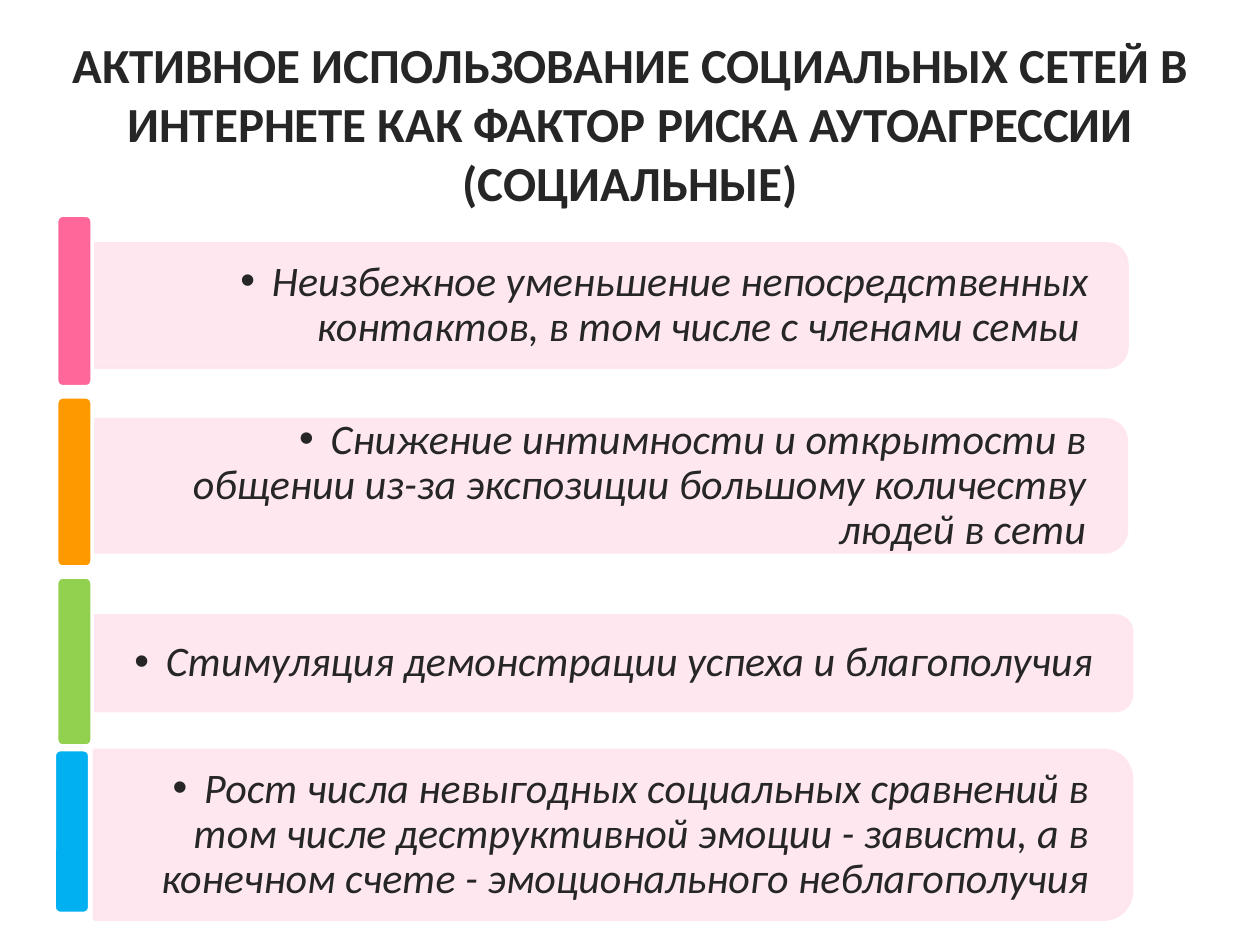
"""Builds a slide on social risk factors of active social network use."""
from lxml import etree
from pptx import Presentation
from pptx.dml.color import RGBColor
from pptx.enum.shapes import MSO_SHAPE
from pptx.enum.text import MSO_ANCHOR, MSO_AUTO_SIZE, PP_ALIGN
from pptx.oxml.ns import qn
from pptx.util import Pt

PANEL, BAR = MSO_SHAPE.ROUND_2_SAME_RECTANGLE, MSO_SHAPE.ROUNDED_RECTANGLE
MIDDLE, NO_FIT = MSO_ANCHOR.MIDDLE, MSO_AUTO_SIZE.NONE
CENTER, RIGHT = PP_ALIGN.CENTER, PP_ALIGN.RIGHT

TITLE = [
    "АКТИВНОЕ ИСПОЛЬЗОВАНИЕ СОЦИАЛЬНЫХ СЕТЕЙ В ИНТЕРНЕТЕ КАК ФАКТОР РИСКА АУТОАГРЕССИИ",
    "(СОЦИАЛЬНЫЕ)",
]
FACTORS = [
    dict(text="Неизбежное уменьшение непосредственных контактов, в том числе с членами семьи ",
         color="FF6699", panel=(53, 139.3, 591, 70.6), text_width=587.5, bar=(32.4, 123, 20.2, 98)),
    dict(text="Снижение интимности и открытости в общении из-за экспозиции большому количеству людей в сети",
         color="FF9900", panel=(54, 239.8, 589.7, 75.6), text_width=586, bar=(32.4, 226.8, 20.2, 97.2)),
    dict(text="Стимуляция демонстрации успеха и благополучия",
         color="92D050", panel=(54, 352, 592.6, 54), text_width=589.7, bar=(32.4, 329.8, 20.2, 96.5)),
    dict(text="Рост числа невыгодных социальных сравнений в том числе деструктивной эмоции - зависти, "
              "а в конечном счете - эмоционального неблагополучия",
         color="00B0F0", panel=(54, 428.8, 592.6, 96.5), text_width=587.5, bar=(31, 428.4, 20.2, 93.6)),
]
THEME = dict(font="Calibri", ink="262626", panel="FEE5EE", edge="FFFFFF",
             title_size=28, body_size=24, line=2, panel_alpha=90000)
TEXT_LEFT, TEXT_GAP = 54, 4
INSET_X, INSET_Y, INDENT = 19.4, 10, 18


def add_run(p, text, size, bold=False, italic=False):
    r = p.add_run()
    r.text = text
    r.font.name, r.font.size = THEME["font"], Pt(size)
    r.font.bold, r.font.italic = bold, italic
    r.font.color.rgb = RGBColor.from_string(THEME["ink"])


def add_block(s, kind, box, fill, edge):
    sp = s.shapes.add_shape(kind, *map(Pt, box))
    sp.shadow.inherit = False
    sp.fill.solid()
    sp.fill.fore_color.rgb = RGBColor.from_string(fill)
    sp.line.color.rgb = RGBColor.from_string(edge)
    sp.line.width = Pt(THEME["line"])
    return sp


def add_panel(s, box):
    x, y, w, h = box
    upright = (x + (w - h) / 2, y + (h - w) / 2, h, w)
    sp = add_block(s, PANEL, upright, THEME["panel"], THEME["panel"])
    sp.rotation = 90
    for color in sp._element.spPr.iter(qn("a:srgbClr")):
        etree.SubElement(color, qn("a:alpha"), val=str(THEME["panel_alpha"]))


def add_bullet(p):
    pPr = p._p.get_or_add_pPr()
    pPr.set("marL", str(Pt(INDENT)))
    pPr.set("indent", str(-Pt(INDENT)))
    etree.SubElement(pPr, qn("a:buFont"), typeface="Arial")
    etree.SubElement(pPr, qn("a:buChar"), char="•")


def add_text(s, box, text):
    tf = s.shapes.add_textbox(*map(Pt, box)).text_frame
    tf.word_wrap, tf.vertical_anchor = True, MIDDLE
    tf.margin_left = tf.margin_right = Pt(INSET_X)
    tf.margin_top = tf.margin_bottom = Pt(INSET_Y)
    p = tf.paragraphs[0]
    add_bullet(p)
    p.level, p.alignment, p.line_spacing = 1, RIGHT, 0.9
    add_run(p, text, THEME["body_size"], italic=True)


def add_title(s):
    sp = s.shapes.title
    sp.left, sp.top, sp.width, sp.height = map(Pt, (0, 15.8, 720, 108.7))
    tf = sp.text_frame
    tf.word_wrap, tf.auto_size, tf.vertical_anchor = True, NO_FIT, MIDDLE
    for i, line in enumerate(TITLE):
        p = tf.add_paragraph() if i else tf.paragraphs[0]
        p.alignment = CENTER
        add_run(p, line, THEME["title_size"], bold=True)


def main():
    prs = Presentation()
    prs.slide_width, prs.slide_height = Pt(720), Pt(540)
    s = prs.slides.add_slide(prs.slide_layouts[5])
    add_title(s)
    for factor in FACTORS:
        _, y, _, h = factor["panel"]
        add_panel(s, factor["panel"])
        text_box = (TEXT_LEFT, y + TEXT_GAP, factor["text_width"], h - 2 * TEXT_GAP)
        add_text(s, text_box, factor["text"])
        add_block(s, BAR, factor["bar"], factor["color"], THEME["edge"])
    prs.save("out.pptx")


if __name__ == "__main__":
    main()
